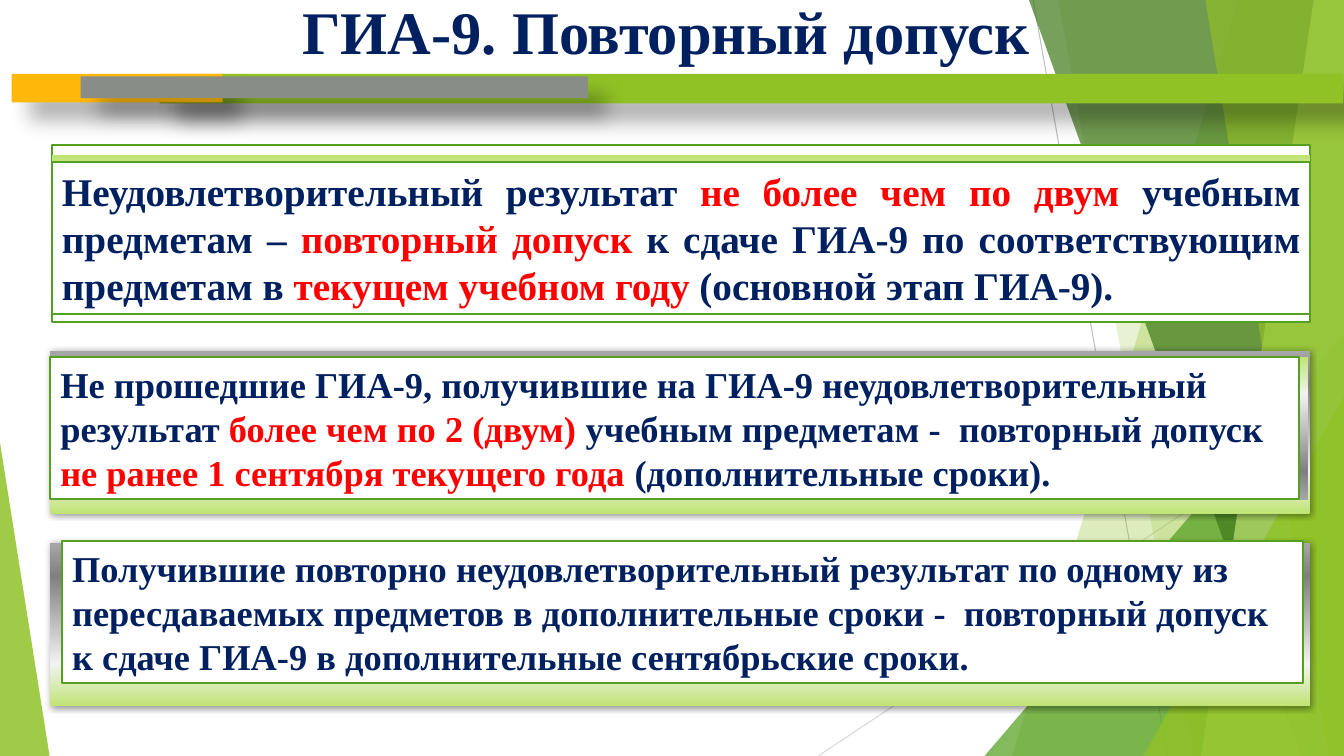
from dataclasses import dataclass

from lxml.etree import SubElement
from pptx import Presentation
from pptx.dml.color import RGBColor
from pptx.enum.shapes import MSO_CONNECTOR as Connector, MSO_SHAPE as Shape
from pptx.enum.text import MSO_ANCHOR as Anchor, PP_ALIGN as Align
from pptx.oxml.ns import qn
from pptx.util import Pt

COLS, ROWS = 160, 90
CELL = Pt(6)


@dataclass(frozen=True)
class Theme:
    """Colours, font and type sizes of the slide."""
    font: str = "Times New Roman"
    title_size: float = 43.2
    lead_size: float = 28
    body_size: float = 26
    ink: str = "002060"
    accent: str = "FF0000"
    paper: str = "FFFFFF"
    border: str = "54A021"
    green: str = "90C226"
    dark_green: str = "3F7819"
    pale_green: str = "C0E474"
    amber: str = "FEB80A"
    grey: str = "888D87"
    metal: tuple = ((0, "C0E474"), (26, "F2F2F2"), (80, "808080"), (100, "A6A6A6"))
    plate_shadow: tuple = (40, 5, 0, 0)
    bar_shadow: tuple = (30, 15, 18, 45)


THEME = Theme()


@dataclass(frozen=True)
class Box:
    """A rectangle in grid columns and rows."""
    left: float
    top: float
    width: float
    height: float

    def inner(self, dx, dy, width, height):
        """Return a box placed relative to this one."""
        return Box(self.left + dx, self.top + dy, width, height)

    def emu(self):
        """Return the position and size as slide lengths."""
        return [cells(n) for n in (self.left, self.top, self.width, self.height)]


def cells(count):
    """Convert grid cells to a slide length."""
    return round(count * CELL)


def rgb(code):
    """Read a hexadecimal colour."""
    return RGBColor.from_string(code)


def paint(shape, color, opacity=100, border=None):
    """Give a shape a solid fill, an optional border and no shadow."""
    shape.shadow.inherit = False
    shape.fill.solid()
    shape.fill.fore_color.rgb = rgb(color)
    if opacity < 100:
        tint = next(shape._element.spPr.iter(qn("a:srgbClr")))
        SubElement(tint, qn("a:alpha"), val=str(opacity * 1000))
    if border:
        shape.line.color.rgb = rgb(border)
        shape.line.width = Pt(1.5)
    else:
        shape.line.fill.background()


def add_panel(slide, box, color, kind=Shape.RECTANGLE, **look):
    """Add a painted preset shape in a box."""
    panel = slide.shapes.add_shape(kind, *box.emu())
    paint(panel, color, **look)
    return panel


def cast_shadow(shape, opacity, blur, distance, angle):
    """Add an outer shadow measured in points and degrees."""
    effects = shape._element.spPr.find(qn("a:effectLst"))
    outer = SubElement(effects, qn("a:outerShdw"), blurRad=str(Pt(blur)),
                       dist=str(Pt(distance)), dir=str(angle * 60000),
                       algn="ctr", rotWithShape="0")
    shade = SubElement(outer, qn("a:srgbClr"), val="000000")
    SubElement(shade, qn("a:alpha"), val=str(opacity * 1000))


def add_metal_plate(slide, box, angle, shadow=None):
    """Add a gradient plate; the angle runs counter-clockwise."""
    plate = add_panel(slide, box, THEME.paper)
    plate.fill.gradient()
    plate.fill.gradient_angle = angle
    stops = next(plate._element.spPr.iter(qn("a:gsLst")))
    for stop in list(stops):
        stops.remove(stop)
    for place, color in THEME.metal:
        stop = SubElement(stops, qn("a:gs"), pos=str(place * 1000))
        SubElement(stop, qn("a:srgbClr"), val=color)
    if shadow:
        cast_shadow(plate, *shadow)


def write(frame, text, size, align=Align.LEFT, spacing=None):
    """Write text whose parts between asterisks alternate to the accent colour."""
    frame.word_wrap = True
    frame.vertical_anchor = Anchor.MIDDLE
    paragraph = frame.paragraphs[0]
    paragraph.alignment = align
    if spacing:
        paragraph.line_spacing = spacing
    for index, part in enumerate(text.split("*")):
        run = paragraph.add_run()
        run.text = part
        run.font.name = THEME.font
        run.font.size = Pt(size)
        run.font.bold = True
        run.font.color.rgb = rgb(THEME.accent if index % 2 else THEME.ink)


def draw_backdrop(slide, box):
    """Draw the thin lines and the translucent green facets."""
    right, bottom = box.width, box.height
    for start, end, color in (((123, 0), (139, bottom), "BFBFBF"),
                              ((right, 48.4), (97.4, bottom), "D9D9D9")):
        ray = slide.shapes.add_connector(Connector.STRAIGHT, *map(cells, start + end))
        ray.line.color.rgb = rgb(color)
        ray.line.width = Pt(0.75)
        SubElement(ray._element.spPr, qn("a:effectLst"))

    def facet(top_x, bottom_x, color, opacity):
        """Add a facet reaching the right edge."""
        outline = slide.shapes.build_freeform(cells(top_x), 0)
        outline.add_line_segments([(cells(x), cells(y)) for x, y in (
            (right, 0), (right, bottom), (bottom_x, bottom))], close=True)
        paint(outline.convert_to_shape(), color, opacity)

    def wedge(left, top, width, apex, color, opacity):
        """Add a triangle standing on the bottom edge."""
        place = box.inner(left, top, width, bottom - top)
        triangle = add_panel(slide, place, color, Shape.ISOSCELES_TRIANGLE,
                             opacity=opacity)
        triangle.adjustments[0] = apex

    facet(147.36, 120.5, THEME.green, 30)
    facet(126, 142, THEME.green, 20)
    wedge(117.2, 40, 42.8, 1, THEME.border, 72)
    facet(122.5, 154.9, THEME.dark_green, 70)
    facet(156.4, 143, THEME.pale_green, 70)
    facet(143.5, 158.2, THEME.green, 65)
    wedge(136.1, 47.2, 23.9, 1, THEME.green, 80)
    wedge(0, 52.7, 5.9, 0, THEME.green, 85)


def draw_header(slide, box):
    """Place the title and the three bars under it."""
    for place, color in (((17.6, 8.8, 140.9, 3.5), THEME.green),
                         ((0, 8.8, 25.1, 3.4), THEME.amber),
                         ((8.2, 9.1, 60.4, 2.6), THEME.grey)):
        cast_shadow(add_panel(slide, box.inner(*place), color), *THEME.bar_shadow)
    title = slide.shapes.title
    title.left, title.top, title.width, title.height = box.inner(12.4, 0, 131, 8.8).emu()
    write(title.text_frame, "ГИА-9. Повторный допуск", THEME.title_size,
          align=Align.CENTER, spacing=0.8)
    slide.shapes._spTree.append(title._element)


def add_rule(slide, box, text, size, **layout):
    """Add a bordered white panel with a rule written in it."""
    panel = add_panel(slide, box, THEME.paper, border=THEME.border)
    write(panel.text_frame, text, size, **layout)


def draw_few_failures(slide, box):
    """Draw the rule for up to two failed subjects."""
    add_panel(slide, box, THEME.paper, border=THEME.border)
    add_metal_plate(slide, box.inner(0, 1.2, box.width, 18.4), 270)
    add_rule(slide, box.inner(0, 2, box.width, 18.1),
             "Неудовлетворительный результат *не более чем по двум *учебным "
             "предметам – *повторный допуск *к сдаче ГИА-9 по соответствующим "
             "предметам в *текущем учебном году *(основной этап ГИА-9).",
             THEME.lead_size, align=Align.JUSTIFY)


def draw_many_failures(slide, box):
    """Draw the rule for more than two failed subjects."""
    add_metal_plate(slide, box, 90, THEME.plate_shadow)
    add_metal_plate(slide, box.inner(0.2, 0.7, 149.5, 17), 270)
    add_rule(slide, box.inner(0, 0.7, 148.6, 16.9),
             "Не прошедшие ГИА-9, получившие на ГИА-9 неудовлетворительный "
             "результат *более чем по 2 (двум) *учебным предметам -  повторный "
             "допуск *не ранее 1 сентября текущего года *(дополнительные сроки).",
             THEME.body_size)


def draw_repeat_failure(slide, box):
    """Draw the rule for a failed resit."""
    add_metal_plate(slide, box, 90, THEME.plate_shadow)
    add_rule(slide, box.inner(1.4, -0.3, 147.7, 16.9),
             "Получившие повторно неудовлетворительный результат по одному из "
             "пересдаваемых предметов в дополнительные сроки -  повторный допуск "
             "к сдаче ГИА-9 в дополнительные сентябрьские сроки.",
             THEME.body_size)


def main():
    """Build the slide and save it."""
    deck = Presentation()
    deck.slide_width, deck.slide_height = cells(COLS), cells(ROWS)
    slide = deck.slides.add_slide(deck.slide_layouts[5])
    draw_backdrop(slide, Box(0, 0, COLS, ROWS))
    draw_few_failures(slide, Box(6.2, 17.3, 149.8, 21))
    draw_many_failures(slide, Box(6, 41.8, 149.9, 19.4))
    draw_header(slide, Box(1.4, 0, 158.6, 12.3))
    draw_repeat_failure(slide, Box(6, 64.7, 149.9, 19.4))
    deck.save("out.pptx")


if __name__ == "__main__":
    main()
